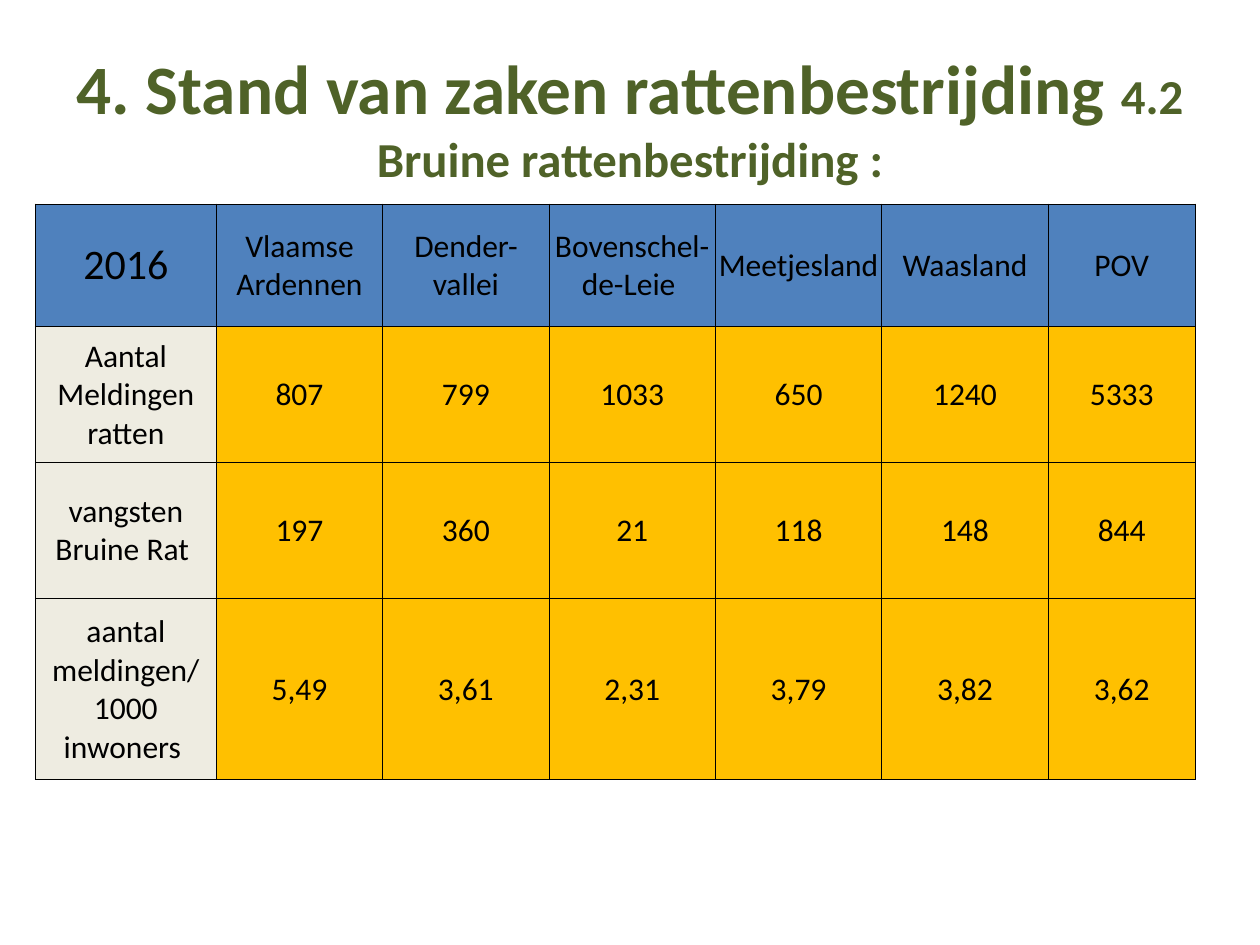
from pptx import Presentation
from pptx.dml.color import RGBColor
from pptx.enum.text import MSO_ANCHOR, MSO_AUTO_SIZE, PP_ALIGN
from pptx.oxml import parse_xml
from pptx.oxml.ns import nsdecls
from pptx.util import Pt

CENTER = PP_ALIGN.CENTER
MIDDLE = MSO_ANCHOR.MIDDLE
NO_AUTOFIT = MSO_AUTO_SIZE.NONE

GREEN = RGBColor(0x4F, 0x62, 0x28)
BLACK = RGBColor(0x00, 0x00, 0x00)
BLUE = RGBColor(0x4F, 0x81, 0xBD)
CREAM = RGBColor(0xEE, 0xEC, 0xE1)
AMBER = RGBColor(0xFF, 0xC0, 0x00)

FONT = "Calibri"
TITLE_BOX = (36, 21.6, 648, 90)
TABLE_BOX = (20.2, 116.6, 663, 329)
COLUMN_WIDTHS = [103.4] + [95.1] * 5 + [84.1]
ROW_HEIGHTS = [69.8, 77.8, 77.8, 103.6]
TITLE_SPANS = [
    ("4. Stand van zaken rattenbestrijding ", 39.6),
    ("4.2 Bruine rattenbestrijding :", 27.9),
]
ROWS = [
    ["2016", "Vlaamse Ardennen", "Dender-vallei", "Bovenschel-de-Leie ",
     "Meetjesland", "Waasland", "POV"],
    ["Aantal Meldingen ratten", "807", "799", "1033", "650", "1240", "5333"],
    ["vangsten Bruine Rat ", "197", "360", "21", "118", "148", "844"],
    ["aantal meldingen/ 1000 inwoners ", "5,49", "3,61", "2,31", "3,79", "3,82", "3,62"],
]


def add_span(para, text, size, color, bold=False):
    span = para.add_run()
    span.text = text
    span.font.name = FONT
    span.font.size = Pt(size)
    span.font.bold = bold
    span.font.color.rgb = color


def place_title(page, box):
    title = page.shapes.title
    title.left, title.top, title.width, title.height = map(Pt, box)
    frame = title.text_frame
    frame.word_wrap = True
    frame.auto_size = NO_AUTOFIT
    frame.vertical_anchor = MIDDLE
    para = frame.paragraphs[0]
    para.alignment = CENTER
    for text, size in TITLE_SPANS:
        add_span(para, text, size, GREEN, bold=True)


def add_borders(cell):
    properties = cell._tc.get_or_add_tcPr()
    for position, side in enumerate(("lnL", "lnR", "lnT", "lnB")):
        properties.insert(position, parse_xml(
            f'<a:{side} {nsdecls("a")} w="{Pt(0.5)}"><a:solidFill>'
            f'<a:srgbClr val="{BLACK}"/></a:solidFill></a:{side}>'))


def format_cell(cell, text, size, fill):
    cell.margin_left = cell.margin_right = cell.margin_top = Pt(0.7)
    cell.margin_bottom = Pt(0)
    cell.vertical_anchor = MIDDLE
    cell.fill.solid()
    cell.fill.fore_color.rgb = fill
    add_borders(cell)
    para = cell.text_frame.paragraphs[0]
    para.alignment = CENTER
    add_span(para, text, size, BLACK)


def place_table(page, box):
    table = page.shapes.add_table(len(ROWS), len(ROWS[0]), *map(Pt, box)).table
    for column, width in zip(table.columns, COLUMN_WIDTHS):
        column.width = Pt(width)
    for row, height in zip(table.rows, ROW_HEIGHTS):
        row.height = Pt(height)
    for row_index, texts in enumerate(ROWS):
        for column_index, text in enumerate(texts):
            fill = BLUE if row_index == 0 else CREAM if column_index == 0 else AMBER
            size = 24 if row_index == column_index == 0 else 18
            format_cell(table.cell(row_index, column_index), text, size, fill)


def main():
    deck = Presentation()
    deck.slide_width, deck.slide_height = Pt(720), Pt(540)
    page = deck.slides.add_slide(deck.slide_layouts.get_by_name("Title Only"))
    place_title(page, TITLE_BOX)
    place_table(page, TABLE_BOX)
    deck.save("out.pptx")


if __name__ == "__main__":
    main()
